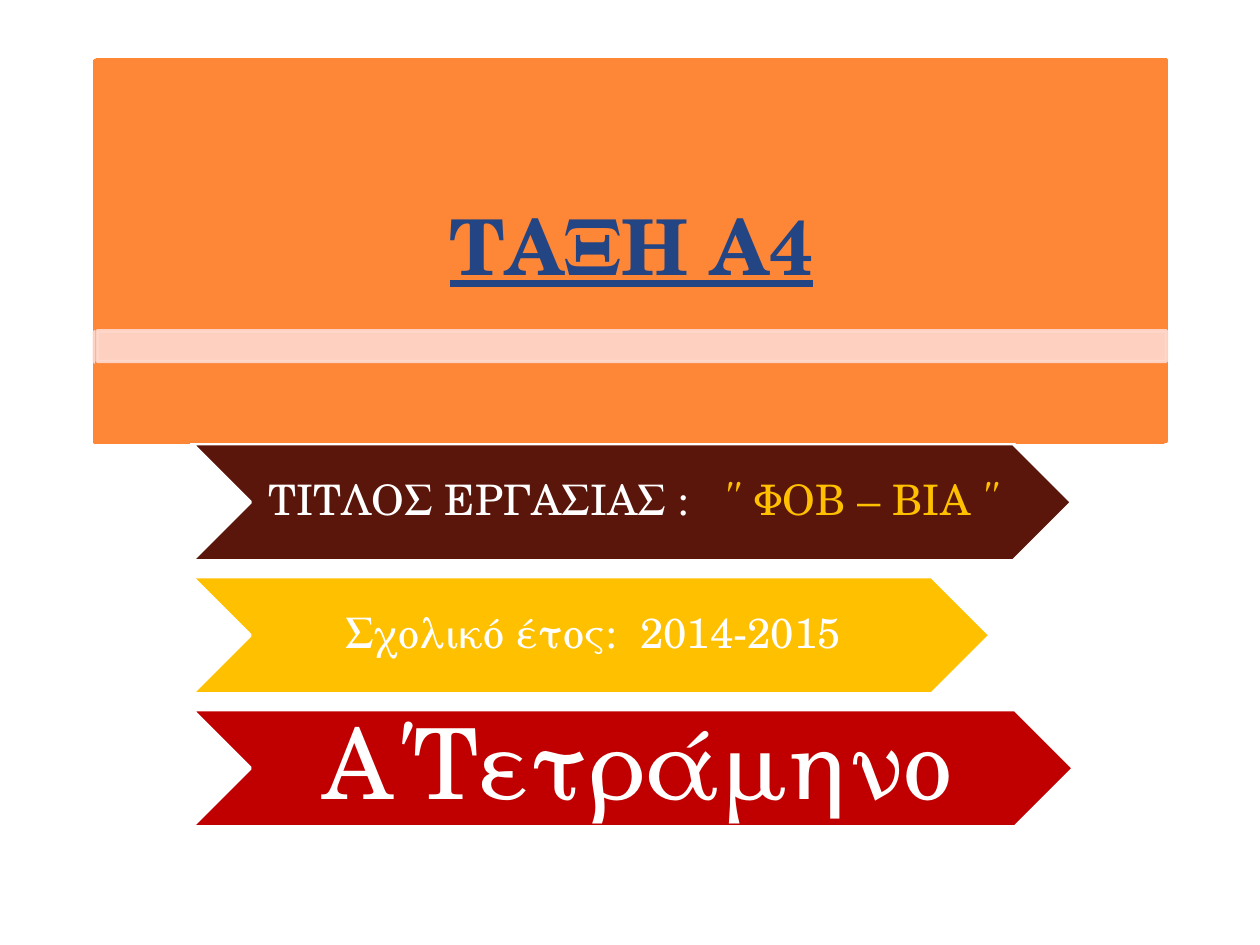
from lxml.etree import SubElement as Sub
from pptx import Presentation
from pptx.dml.color import RGBColor as RGB
from pptx.enum.shapes import MSO_SHAPE as Geo
from pptx.enum.text import MSO_ANCHOR as Anchor, PP_ALIGN as Align
from pptx.oxml.ns import qn
from pptx.util import Pt

FONT = "TeX Gyre Schola"
WHITE = RGB(0xFF, 0xFF, 0xFF)
ORANGE = RGB(0xFE, 0x86, 0x37)
PEACH = RGB(0xFF, 0xD9, 0xCE)
BLUE = RGB(0x24, 0x45, 0x83)
BROWN = RGB(0x5A, 0x16, 0x0B)
GOLD = RGB(0xFF, 0xC0, 0x00)
RED = RGB(0xC0, 0x00, 0x00)


class Deck:
    """Draws styled panels, bands and arrows on the current slide."""

    def __init__(self, slide):
        self.slide = slide

    def block(self, geo, box, fill, edge):
        shape = self.slide.shapes.add_shape(geo, *map(Pt, box))
        shape.shadow.inherit = False
        shape.fill.solid()
        shape.fill.fore_color.rgb = fill
        shape.line.color.rgb = edge
        shape.line.width = Pt(2)
        return shape

    def label(self, shape, runs, size, pads, bold=None, under=None):
        frame = shape.text_frame
        frame.word_wrap = True
        frame.vertical_anchor = Anchor.MIDDLE
        (frame.margin_left, frame.margin_top,
         frame.margin_right, frame.margin_bottom) = map(Pt, pads)
        para = frame.paragraphs[0]
        para.alignment = Align.CENTER
        para.line_spacing = 0.9
        for text, color in runs:
            run = para.add_run()
            run.text = text
            font = run.font
            font.name, font.size = FONT, Pt(size)
            font.bold, font.underline = bold, under
            font.color.rgb = color

    def panel(self, left, top):
        return self.block(Geo.RECTANGLE, (left, top, 611, 218), ORANGE, ORANGE)

    def band(self, left, top):
        shape = self.block(Geo.RECTANGLE, (left, top, 611, 17.5), PEACH, PEACH)
        for color in shape._element.spPr.iter(qn("a:srgbClr")):
            Sub(color, qn("a:alpha"), val="90000")

    def arrow(self, top, width, fill, size, runs):
        shape = self.block(Geo.CHEVRON, (109.5, top, width, 67), fill, WHITE)
        pad = size / 20
        self.label(shape, runs, size, (2 * pad, pad, 0, pad))


def main():
    prs = Presentation()
    prs.slide_width, prs.slide_height = Pt(720), Pt(540)
    deck = Deck(prs.slides.add_slide(prs.slide_layouts[6]))

    deck.panel(54, 34.5)
    deck.band(54, 189.5)

    arrows = [
        (503, BROWN, 24, [("ΤΙΤΛΟΣ ΕΡΓΑΣΙΑΣ :   ", WHITE),
                          ("΄΄ ΦΟΒ – ΒΙΑ ΄΄", GOLD)]),
        (456.5, GOLD, 24, [("Σχολικό έτος:  2014-2015", WHITE)]),
        (504, RED, 56, [("Α΄Τετράμηνο", WHITE)]),
    ]
    for row, spec in enumerate(arrows):
        deck.arrow(253.5 + 76 * row, *spec)

    title = deck.panel(55.5, 34)
    deck.label(title, [("ΤΑΞΗ Α4", BLUE)], 44, (24.5, 14.4, 24.5, 14.4),
               bold=True, under=True)
    deck.band(55.5, 189)

    prs.save("out.pptx")


if __name__ == "__main__":
    main()
